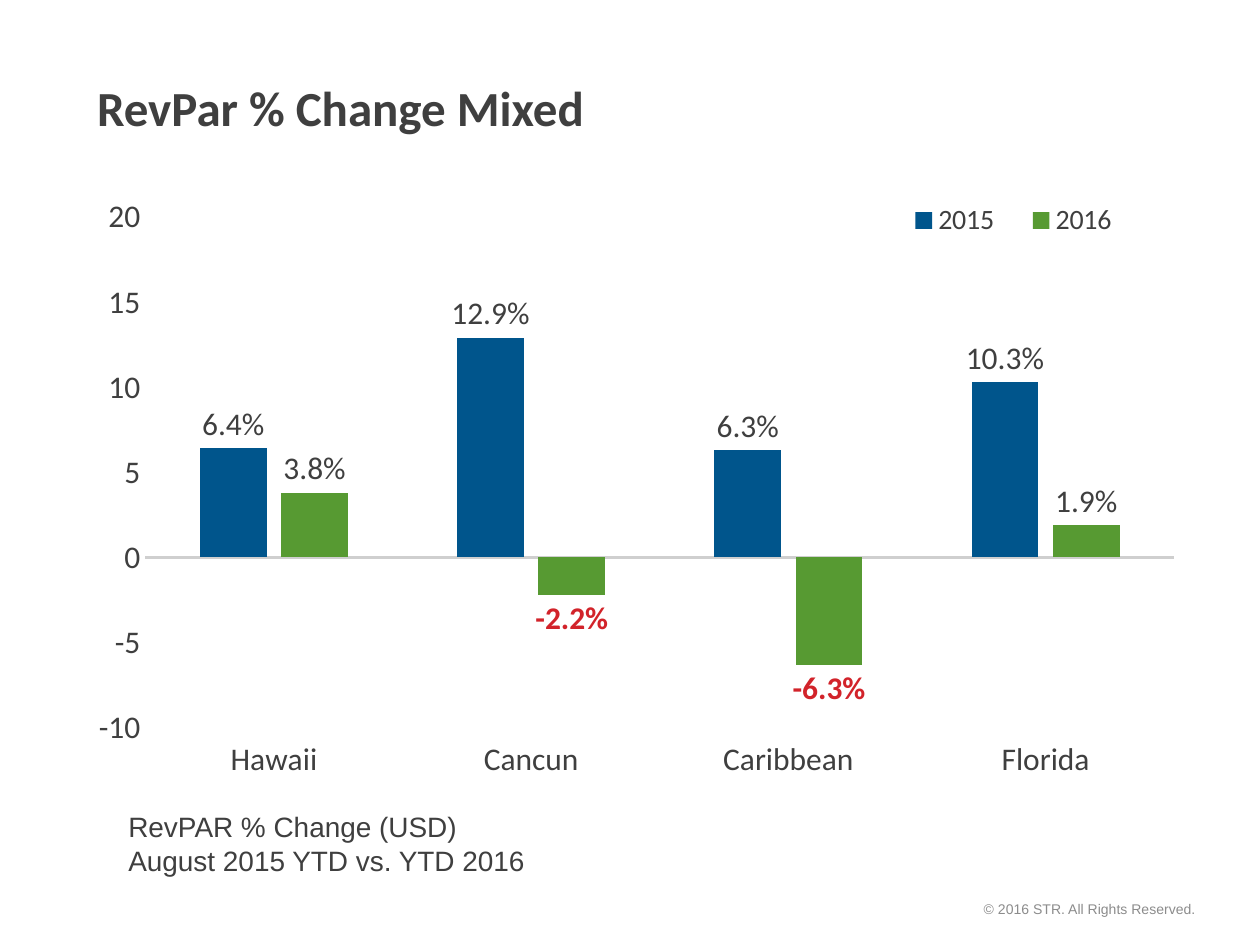
import pptx
import pptx.util
import pptx.dml.color
import pptx.chart.data
import pptx.enum.chart
import pptx.enum.text
import pptx.oxml

Inches, Pt = pptx.util.Inches, pptx.util.Pt
XL = pptx.enum.chart
C_NS = "http://schemas.openxmlformats.org/drawingml/2006/chart"
GREY = "3F3F3F"


def style(font, size, color, name="Calibri", bold=False):
    font.size = Pt(size)
    font.name = name
    font.bold = bold
    font.color.rgb = pptx.dml.color.RGBColor.from_string(color)


def set_layout(parent, index, target, x, y, w, h):
    for old in parent.findall(f"{{{C_NS}}}layout"):
        parent.remove(old)
    parts = f'<c:layoutTarget val="{target}"/>' if target else ""
    parts += '<c:xMode val="edge"/><c:yMode val="edge"/>'
    for tag, val in zip("xywh", (x, y, w, h)):
        parts += f'<c:{tag} val="{val}"/>'
    parent.insert(index, pptx.oxml.parse_xml(
        f'<c:layout xmlns:c="{C_NS}"><c:manualLayout>{parts}</c:manualLayout></c:layout>'))


prs = pptx.Presentation()
prs.slide_width, prs.slide_height = Inches(10), Inches(7.5)
s = prs.slides.add_slide(prs.slide_layouts[5])

title = s.shapes.title
title.left, title.top, title.width, title.height = (
    Inches(0.67), Inches(0.5), Inches(8.06), Inches(0.7))
tf = title.text_frame
tf.vertical_anchor = pptx.enum.text.MSO_ANCHOR.MIDDLE
p = tf.paragraphs[0]
p.alignment = pptx.enum.text.PP_ALIGN.LEFT
r = p.add_run()
r.text = "RevPar % Change Mixed"
style(r.font, 28, GREY, bold=True)

data = pptx.chart.data.CategoryChartData(number_format="General")
data.categories = ["Hawaii", "Cancun", "Caribbean", "Florida"]
data.add_series("2015", (6.4, 12.9, 6.3, 10.3))
data.add_series("2016", (3.8, -2.2, -6.3, 1.9))
chart = s.shapes.add_chart(
    XL.XL_CHART_TYPE.COLUMN_CLUSTERED,
    Inches(0.52), Inches(1.49), Inches(8.81), Inches(4.72), data).chart
chart.has_title = False
style(chart.font, 18, GREY)

cat_axis = chart.category_axis
cat_axis.tick_label_position = XL.XL_TICK_LABEL_POSITION.LOW
cat_axis.major_tick_mark = XL.XL_TICK_MARK.NONE
cat_axis.format.line.width = Pt(1.5)
cat_axis.format.line.color.rgb = pptx.dml.color.RGBColor.from_string("CFCFCF")

val_axis = chart.value_axis
val_axis.minimum_scale, val_axis.maximum_scale = -10, 20
val_axis.major_unit = 5
val_axis.has_major_gridlines = False
val_axis.major_tick_mark = XL.XL_TICK_MARK.NONE
val_axis.format.line.fill.background()
val_axis.tick_labels.number_format = "0"
val_axis.tick_labels.number_format_is_linked = False

chart.has_legend = True
legend = chart.legend
legend.position = XL.XL_LEGEND_POSITION.TOP
legend.include_in_layout = False
style(legend.font, 16, GREY)

plot = chart.plots[0]
plot.gap_width, plot.overlap = 164, -22
plot.vary_by_categories = False
for series, color in zip(plot.series, ("00558C", "579A32")):
    series.invert_if_negative = False
    series.format.fill.solid()
    series.format.fill.fore_color.rgb = pptx.dml.color.RGBColor.from_string(color)
    labels = series.data_labels
    labels.show_value = True
    labels.number_format = '0.0"%"'
    labels.number_format_is_linked = False
    labels.position = XL.XL_LABEL_POSITION.OUTSIDE_END
    style(labels.font, 18, GREY)
    for i, value in enumerate(series.values):
        if value < 0:
            label = series.points[i].data_label
            r = label.text_frame.paragraphs[0].add_run()
            r.text = f"{value}%"
            style(r.font, 18, "D2232A", bold=True)
            label.position = XL.XL_LABEL_POSITION.OUTSIDE_END

plot_area = chart.element.find(f".//{{{C_NS}}}plotArea")
set_layout(plot_area, 0, "inner", 0.072, 0.049, 0.928, 0.859)
set_layout(chart.element.find(f".//{{{C_NS}}}legend"), 1, None, 0.74, 0.02, 0.23, 0.07)

notes = [
    ((0.92, 6.38, 3.38, 0.64), ["RevPAR % Change (USD)", "August 2015 YTD vs. YTD 2016"],
     16, GREY, pptx.enum.text.PP_ALIGN.LEFT, False),
    ((7, 7.1, 2.62, 0.24), ["© 2016 STR. All Rights Reserved. "],
     8, "8C8C8C", pptx.enum.text.PP_ALIGN.RIGHT, True),
]
for box, lines, size, color, align, wrap in notes:
    tf = s.shapes.add_textbox(*map(Inches, box)).text_frame
    tf.word_wrap = wrap
    p = tf.paragraphs[0]
    p.alignment = align
    for i, line in enumerate(lines):
        if i:
            p.add_line_break()
        r = p.add_run()
        r.text = line
        style(r.font, size, color, "Arial")

prs.save("out.pptx")
